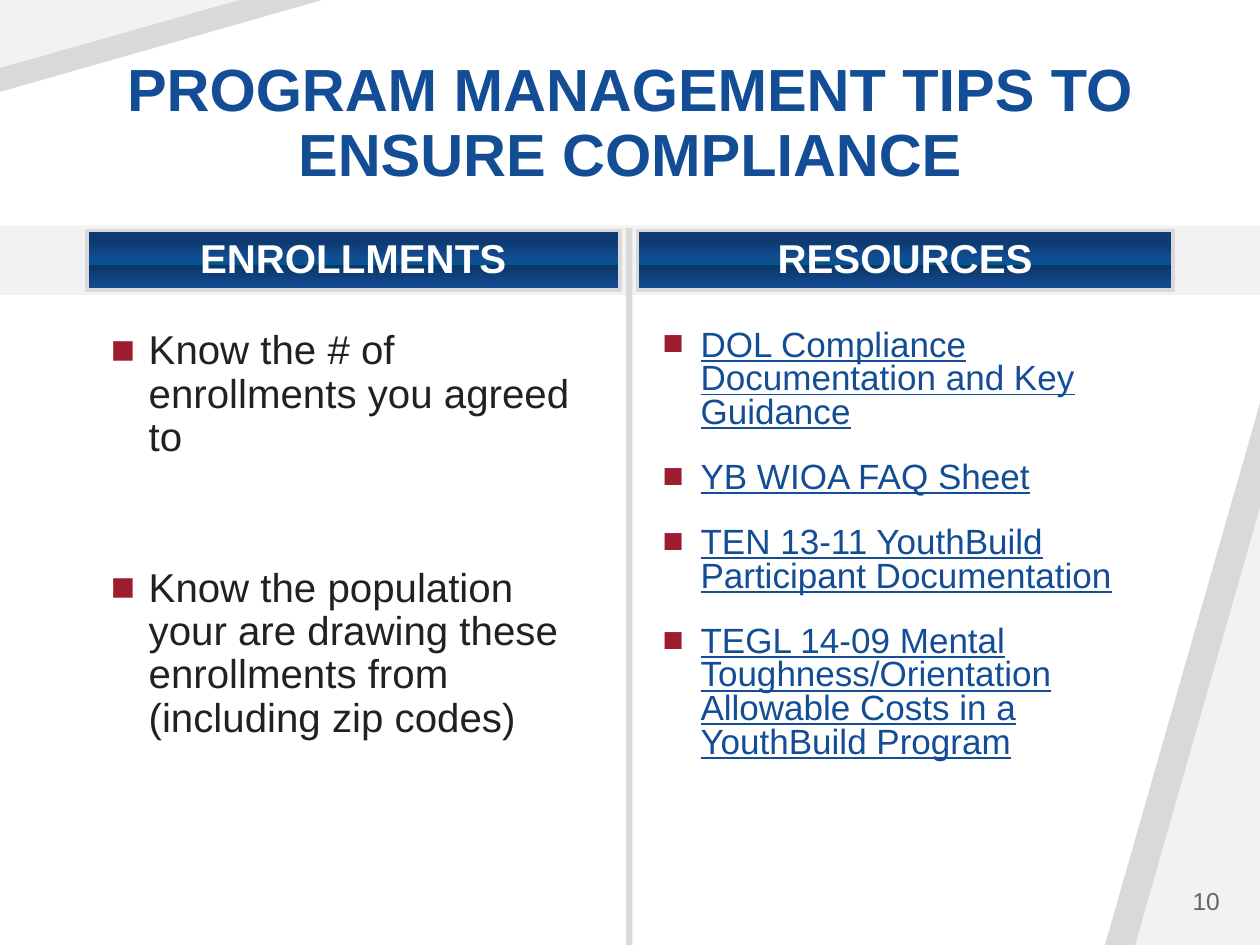
from copy import deepcopy
from pptx import Presentation
from pptx.dml.color import RGBColor
from pptx.enum.shapes import MSO_SHAPE
from pptx.enum.text import MSO_ANCHOR, MSO_AUTO_SIZE, PP_ALIGN
from pptx.oxml.ns import qn
from pptx.util import Inches, Pt
from lxml.etree import SubElement

BLUE = "124D95"
GREY = "D9D9D9"
PALE = "F2F2F2"
BANNER_STOPS = [(0.19, "0D3A70"), (0.47, BLUE), (0.58, "00588F"), (0.59, "0D3668"), (1, BLUE)]


def color(value):
    return RGBColor.from_string(value)


class SlideBuilder:
    font_name = "Arial"
    bullet_color = "9E1C30"

    def __init__(self, slide):
        self.slide = slide

    def block(self, preset, left, top, width, height, fill):
        shape = self.slide.shapes.add_shape(
            preset, Inches(left), Inches(top), Inches(width), Inches(height))
        shape.shadow.inherit = False
        shape.fill.solid()
        shape.fill.fore_color.rgb = color(fill)
        shape.line.fill.background()
        return shape

    def right_corner(self, width, height, fill):
        corner = self.block(MSO_SHAPE.ISOSCELES_TRIANGLE, 10 - width, 7.5 - height,
                            width, height, fill)
        corner.adjustments[0] = 1

    def left_corner(self, width, height, fill):
        offset = (width - height) / 2
        corner = self.block(MSO_SHAPE.ISOSCELES_TRIANGLE, offset, -offset, height, width, fill)
        corner.adjustments[0] = 1
        corner.rotation = 270
        corner._element.spPr.find(qn("a:xfrm")).set("flipV", "1")

    def placeholder(self, index, left, top, width, height, anchor):
        holder = self.slide.placeholders[index]
        holder.left, holder.top = Inches(left), Inches(top)
        holder.width, holder.height = Inches(width), Inches(height)
        self.slide.shapes._spTree.append(holder._element)
        frame = holder.text_frame
        frame.word_wrap = True
        frame.auto_size = MSO_AUTO_SIZE.NONE
        frame.vertical_anchor = anchor
        return holder

    def add_text(self, paragraph, text, size, ink, align, spacing=0.9, before=0,
                 bold=False, underline=False):
        paragraph.alignment = align
        paragraph.line_spacing = spacing
        paragraph.space_before = Pt(before)
        run = paragraph.add_run()
        run.text = text
        run.font.name = self.font_name
        run.font.size = Pt(size)
        run.font.bold = bold
        run.font.underline = underline
        run.font.color.rgb = color(ink)

    def title(self, text):
        holder = self.placeholder(0, 0.69, 0.4, 8.62, 1.15, MSO_ANCHOR.BOTTOM)
        self.add_text(holder.text_frame.paragraphs[0], text, 34, BLUE, PP_ALIGN.CENTER, bold=True)

    def banner(self, index, left, width, text):
        holder = self.placeholder(index, left, 1.83, width, 0.47, MSO_ANCHOR.MIDDLE)
        holder.fill.gradient()
        holder.fill.gradient_angle = 270
        stop_list = holder._element.spPr.find(qn("a:gradFill")).find(qn("a:gsLst"))
        while len(stop_list) < len(BANNER_STOPS):
            stop_list.append(deepcopy(stop_list[0]))
        for stop, (position, tint) in zip(holder.fill.gradient_stops, BANNER_STOPS):
            stop.position = position
            stop.color.rgb = color(tint)
        holder.line.color.rgb = color(GREY)
        holder.line.width = Pt(2)
        frame = holder.text_frame
        frame.margin_left = frame.margin_right = Inches(0.05)
        frame.margin_top = frame.margin_bottom = Inches(0.06)
        self.add_text(frame.paragraphs[0], text, 23, "FFFFFF", PP_ALIGN.CENTER, bold=True)

    def bullet(self, paragraph):
        properties = paragraph._p.get_or_add_pPr()
        properties.set("marL", str(Inches(0.3)))
        properties.set("indent", str(-Inches(0.3)))
        tint = SubElement(properties, qn("a:buClr"))
        SubElement(tint, qn("a:srgbClr")).set("val", self.bullet_color)
        SubElement(properties, qn("a:buFont")).set("typeface", self.font_name)
        SubElement(properties, qn("a:buChar")).set("char", "■")

    def bullets(self, index, left, items, size, ink, spacing, gap, underline=False):
        frame = self.placeholder(index, left, 2.57, 4.1, 4.2, MSO_ANCHOR.TOP).text_frame
        for number, item in enumerate(items):
            paragraph = frame.add_paragraph() if number else frame.paragraphs[0]
            self.bullet(paragraph)
            self.add_text(paragraph, item, size, ink, PP_ALIGN.LEFT, spacing,
                          gap if number else 0, underline=underline)

    def page_number(self, text):
        box = self.slide.shapes.add_textbox(Inches(8.96), Inches(6.95), Inches(0.82), Inches(0.4))
        box.text_frame.word_wrap = True
        box.text_frame.vertical_anchor = MSO_ANCHOR.MIDDLE
        self.add_text(box.text_frame.paragraphs[0], text, 14, "646464", PP_ALIGN.RIGHT, 1)


def main():
    deck = Presentation()
    deck.slide_width, deck.slide_height = Inches(10), Inches(7.5)
    tips = SlideBuilder(deck.slides.add_slide(deck.slide_layouts[4]))

    tips.right_corner(1.23, 4.3, GREY)
    tips.right_corner(0.99, 3.47, PALE)
    tips.left_corner(2.56, 0.73, GREY)
    tips.left_corner(1.9, 0.54, PALE)
    tips.block(MSO_SHAPE.RECTANGLE, 0, 1.79, 10, 0.55, PALE)
    tips.block(MSO_SHAPE.RECTANGLE, 4.97, 1.81, 0.05, 5.69, GREY)

    tips.title("PROGRAM MANAGEMENT TIPS TO ENSURE COMPLIANCE")
    tips.banner(1, 0.69, 4.23, "ENROLLMENTS")
    tips.bullets(2, 0.78, [
        "Know the # of enrollments you agreed to",
        "Know the population your are drawing these enrollments from (including zip codes)",
    ], 23, "242021", 0.9, 61)
    tips.banner(3, 5.06, 4.25, "RESOURCES")
    tips.bullets(4, 5.16, [
        "DOL Compliance Documentation and Key Guidance",
        "YB WIOA FAQ Sheet",
        "TEN 13-11 YouthBuild Participant Documentation",
        "TEGL 14-09 Mental Toughness/Orientation Allowable Costs in a YouthBuild Program",
    ], 20, BLUE, 0.8, 18, underline=True)
    tips.page_number("10")

    deck.save("out.pptx")


if __name__ == "__main__":
    main()
